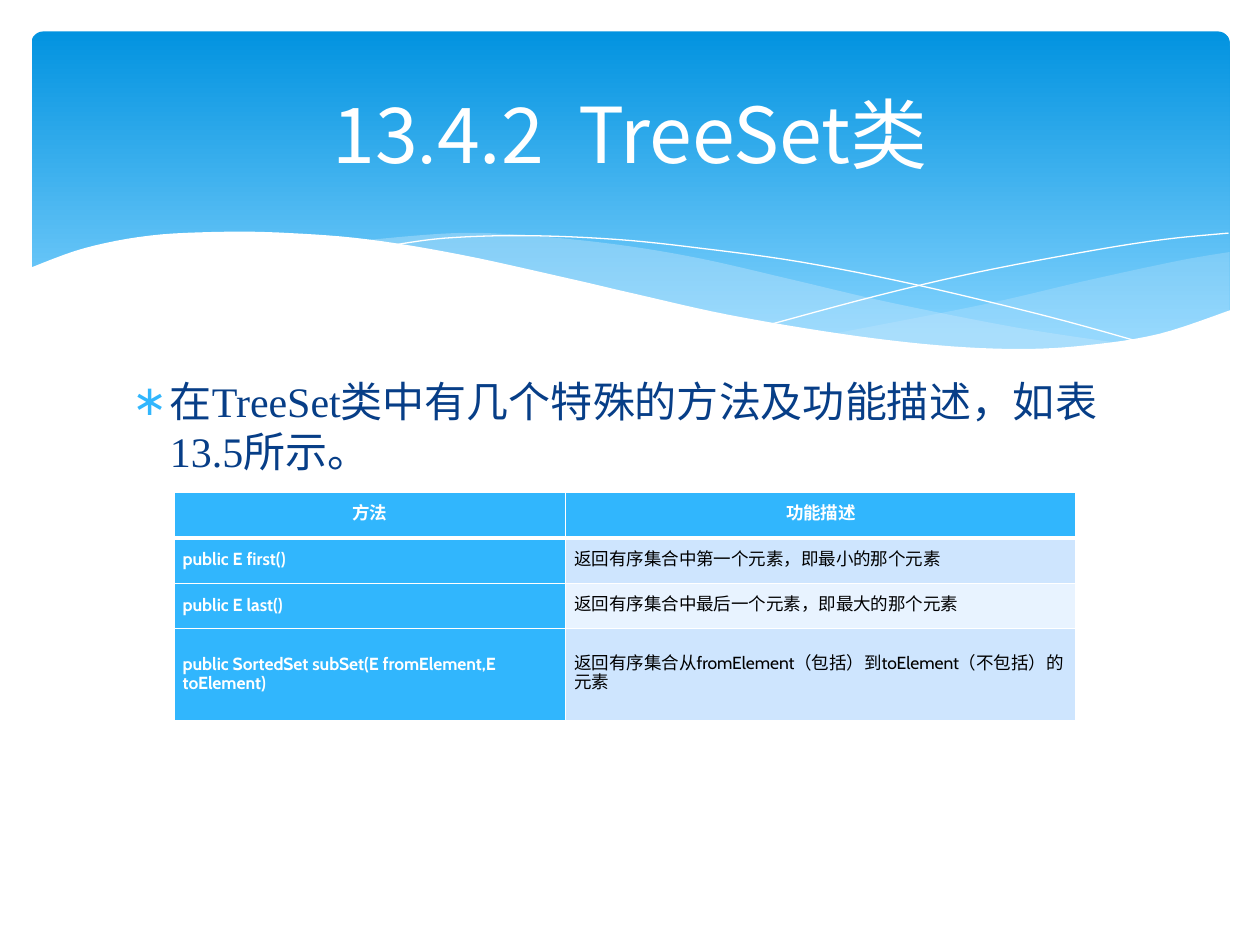
from dataclasses import dataclass

from lxml import etree
from pptx import Presentation
from pptx.dml.color import RGBColor
from pptx.enum.shapes import MSO_SHAPE
from pptx.enum.text import MSO_ANCHOR, PP_ALIGN
from pptx.oxml.ns import qn
from pptx.util import Inches, Pt

ROUNDED = MSO_SHAPE.ROUNDED_RECTANGLE
MIDDLE, TOP = MSO_ANCHOR.MIDDLE, MSO_ANCHOR.TOP
CENTER, LEFT = PP_ALIGN.CENTER, PP_ALIGN.LEFT
TITLE_ONLY = 5


@dataclass(frozen=True)
class Theme:
    white: str = "FFFFFF"
    black: str = "000000"
    banner_top: str = "0293E0"
    banner_bottom: str = "83D3FE"
    wave: str = "C6E7FC"
    accent: str = "31B6FD"
    body: str = "073E87"
    bands: tuple = ("CEE5FE", "E8F3FF")
    sans: str = "Noto Sans CJK SC"
    serif: str = "Times New Roman"
    table: str = "Cabin"
    title_size: int = 44
    body_size: int = 24
    table_size: int = 10


THEME = Theme()

TITLE = [("13", THEME.sans), (".", THEME.serif), ("4.2  TreeSet类", THEME.sans)]
BODY = "在TreeSet类中有几个特殊的方法及功能描述，如表13.5所示。"
ROWS = [
    ("方法", "功能描述"),
    ("public E first()", "返回有序集合中第一个元素，即最小的那个元素"),
    ("public E last()", "返回有序集合中最后一个元素，即最大的那个元素"),
    ("public SortedSet subSet(E fromElement,E toElement)",
     "返回有序集合从fromElement（包括）到toElement（不包括）的元素"),
]
COLUMN_WIDTHS = (3.11, 4.05)
ROW_HEIGHTS = (0.36, 0.36, 0.36, 0.73)

# Each wave is a chain of smooth curves, given by the points they pass through.
RIGHT_WAVE = [
    [(9.76, 2), (9.35, 2.07), (8.61, 2.23), (7.79, 2.42), (6.61, 2.65)],
    [(6.61, 2.65), (7.32, 2.74), (8.03, 2.78), (8.72, 2.74), (9.28, 2.63), (9.76, 2.47)],
]
MIDDLE_WAVE = [
    [(8.93, 2.73), (8.07, 2.6), (7.06, 2.4), (6.29, 2.22), (5.55, 2.05), (4.89, 1.94),
     (4.2, 1.87), (3.61, 1.85), (2.86, 1.91)],
    [(2.86, 1.91), (3.62, 2.03), (4.49, 2.22), (5.3, 2.4), (6.18, 2.58), (6.95, 2.7),
     (7.61, 2.77), (8.28, 2.78), (8.93, 2.73)],
]
FRONT_WAVE = [
    [(9.77, 2.46), (9.2, 2.65), (8.63, 2.74), (8.09, 2.77), (7.44, 2.74), (6.68, 2.65),
     (5.79, 2.5), (5.03, 2.33), (4.47, 2.2), (3.65, 2.02), (2.92, 1.9), (2.3, 1.85),
     (1.77, 1.84), (1.19, 1.87), (0.67, 1.97), (0.23, 2.13)],
    [(0.23, 3.29), (9.77, 3.29)],
]
FALLING_LINE = [
    [(3.09, 1.95), (3.53, 1.89), (4.16, 1.87), (4.89, 1.9), (5.56, 1.97), (6.36, 2.08),
     (7.27, 2.26), (8.31, 2.51), (9.07, 2.72)],
]
RISING_LINE = [
    [(6.13, 2.57), (6.95, 2.35), (7.76, 2.16), (8.66, 1.99), (9.24, 1.9), (9.75, 1.85)],
]
# curves, fill colour, opacity in percent; no fill means an open white line
WAVES = [
    (RIGHT_WAVE, THEME.wave, 29),
    (MIDDLE_WAVE, THEME.wave, 40),
    (FALLING_LINE, None, 100),
    (RISING_LINE, None, 100),
    (FRONT_WAVE, THEME.white, 100),
]


def rgb(value):
    return RGBColor.from_string(value)


def add_xml(parent, tag, **attributes):
    return etree.SubElement(parent, qn(tag), attributes)


def smooth(points, steps=6):
    """Catmull-Rom curve through the points, as short straight steps."""
    padded = [points[0], *points, points[-1]]
    curve = [points[0]]
    for a, b, c, d in zip(padded, padded[1:], padded[2:], padded[3:]):
        for step in range(1, steps + 1):
            t = step / steps
            curve.append(tuple(
                (2 * q + (r - p) * t + (2 * p - 5 * q + 4 * r - s) * t ** 2
                 + (3 * q - p - 3 * r + s) * t ** 3) / 2
                for p, q, r, s in zip(a, b, c, d)))
    return curve


def add_wave(slide, curves, color, opacity):
    points = [(Inches(x), Inches(y)) for curve in curves for x, y in smooth(curve)]
    builder = slide.shapes.build_freeform(*points[0])
    builder.add_line_segments(points[1:], close=color is not None)
    wave = builder.convert_to_shape()
    wave.shadow.inherit = False
    if color is None:
        wave.fill.background()
        wave.line.color.rgb = rgb(THEME.white)
        wave.line.width = Pt(0)
        return
    wave.line.fill.background()
    wave.fill.solid()
    wave.fill.fore_color.rgb = rgb(color)
    if opacity < 100:
        fill_color = wave._element.spPr.find(".//" + qn("a:srgbClr"))
        add_xml(fill_color, "a:alpha", val=str(opacity * 1000))


def add_banner(slide):
    banner = slide.shapes.add_shape(
        ROUNDED, Inches(0.25), Inches(0.25), Inches(9.51), Inches(2.7))
    banner.adjustments[0] = 0.034
    banner.shadow.inherit = False
    banner.line.fill.background()
    banner.fill.gradient()
    banner.fill.gradient_angle = 270
    colors = ((0, THEME.banner_top), (0.9, THEME.banner_bottom))
    for stop, (position, color) in zip(banner.fill.gradient_stops, colors):
        stop.position = position
        stop.color.rgb = rgb(color)


def add_span(para, text, font, size, color, bold=False):
    span = para.add_run()
    span.text = text
    formats = {"name": font, "size": Pt(size), "bold": bold}
    for name, value in formats.items():
        setattr(span.font, name, value)
    span.font.color.rgb = rgb(color)
    add_xml(span._r.get_or_add_rPr(), "a:ea", typeface=THEME.sans)


def place(shape, left, top, width, height):
    box = {"left": left, "top": top, "width": width, "height": height}
    for name, value in box.items():
        setattr(shape, name, Inches(value))


def fill_title(slide):
    title = slide.shapes.title
    place(title, 0.5, 0.37, 9, 1.37)
    title.text_frame.vertical_anchor = MIDDLE
    para = title.text_frame.paragraphs[0]
    para.alignment = CENTER
    for text, font in TITLE:
        add_span(para, text, font, THEME.title_size, THEME.white)
    slide.shapes._spTree.append(title._element)  # in front of the banner


def add_body(slide):
    box = slide.shapes.add_textbox(Inches(0.95), Inches(2.93), Inches(8.1), Inches(3.77))
    box.text_frame.word_wrap = True
    box.text_frame.vertical_anchor = TOP
    para = box.text_frame.paragraphs[0]
    para.space_before = Pt(5)
    add_span(para, BODY, THEME.serif, THEME.body_size, THEME.body)
    properties = para._p.get_or_add_pPr()
    properties.set("marL", str(Inches(0.3)))
    properties.set("indent", str(-Inches(0.3)))
    add_xml(add_xml(properties, "a:buClr"), "a:srgbClr", val=THEME.accent)
    add_xml(properties, "a:buFont", typeface=THEME.table)
    add_xml(properties, "a:buChar", char="∗")


def set_borders(cell, widths):
    """Insert white borders ahead of the cell's fill."""
    properties = cell._tc.get_or_add_tcPr()
    for index, (side, width) in enumerate(widths.items()):
        border = etree.Element(qn(f"a:ln{side}"), w=str(Pt(width)))
        add_xml(add_xml(border, "a:solidFill"), "a:srgbClr", val=THEME.white)
        properties.insert(index, border)


def add_methods_table(slide):
    table = slide.shapes.add_table(
        len(ROWS), len(COLUMN_WIDTHS), Inches(1.38), Inches(3.91),
        Inches(sum(COLUMN_WIDTHS)), Inches(sum(ROW_HEIGHTS))).table
    table.first_row = table.horz_banding = False
    for column, width in zip(table.columns, COLUMN_WIDTHS):
        column.width = Inches(width)
    cell_format = {"vertical_anchor": MIDDLE, "margin_left": Inches(0.07),
                   "margin_right": Inches(0.07), "margin_top": 0, "margin_bottom": 0}
    for r, texts in enumerate(ROWS):
        table.rows[r].height = Inches(ROW_HEIGHTS[r])
        for c, text in enumerate(texts):
            cell = table.cell(r, c)
            for name, value in cell_format.items():
                setattr(cell, name, value)
            heading = r == 0 or c == 0
            cell.fill.solid()
            cell.fill.fore_color.rgb = rgb(THEME.accent if heading else THEME.bands[(r - 1) % 2])
            set_borders(cell, {"L": 1, "R": 1, "T": 3 if r == 1 else 1, "B": 3 if r == 0 else 1})
            para = cell.text_frame.paragraphs[0]
            para.alignment = CENTER if r == 0 else LEFT
            para.line_spacing = Pt(11)
            add_span(para, text, THEME.table, THEME.table_size,
                     THEME.white if heading else THEME.black, heading)


def main():
    deck = Presentation()
    deck.slide_width, deck.slide_height = Inches(10), Inches(7.5)
    slide = deck.slides.add_slide(deck.slide_layouts[TITLE_ONLY])
    add_banner(slide)
    for curves, color, opacity in WAVES:
        add_wave(slide, curves, color, opacity)
    fill_title(slide)
    add_body(slide)
    add_methods_table(slide)
    deck.save("out.pptx")


if __name__ == "__main__":
    main()
